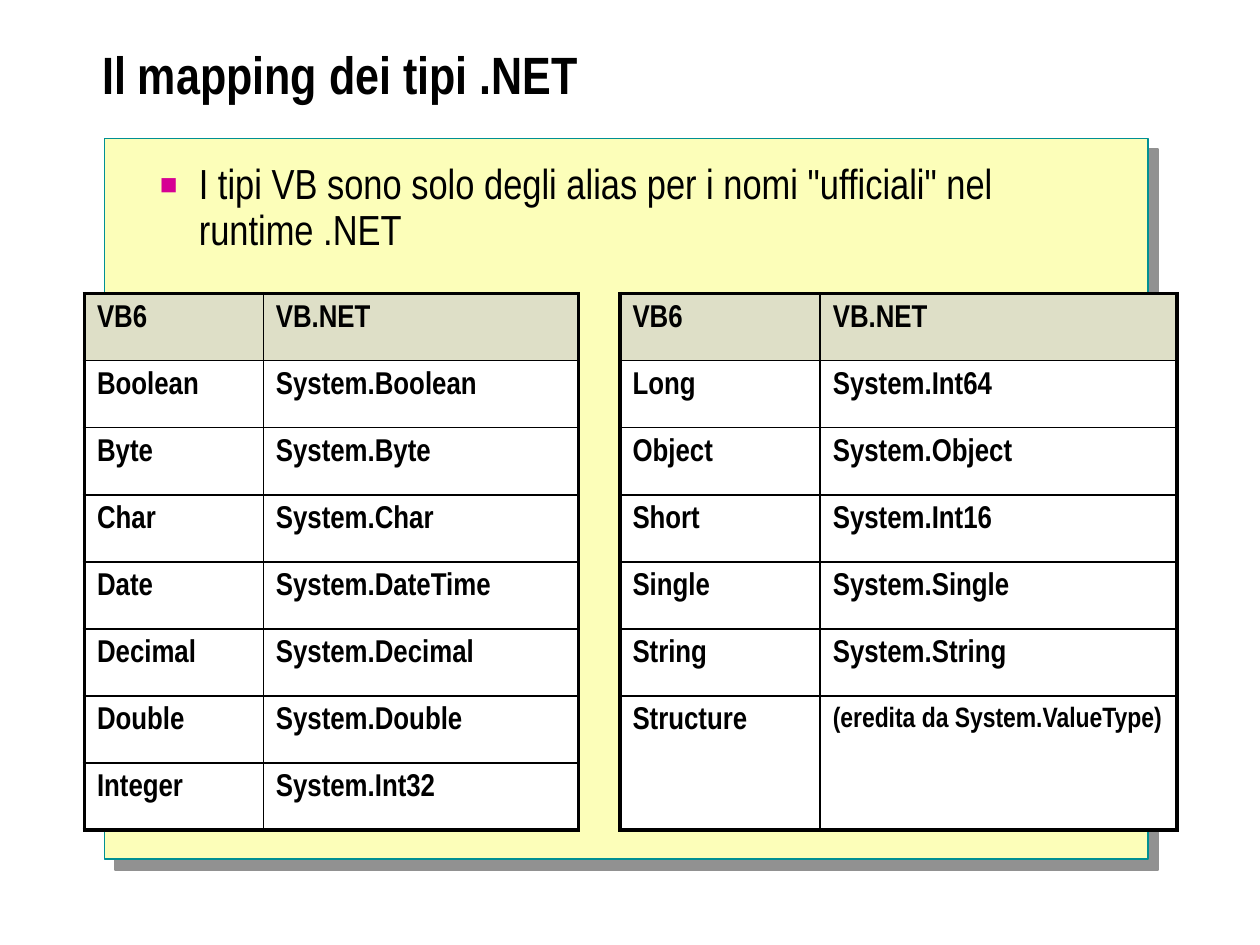
from lxml import etree
from pptx import Presentation
from pptx.dml.color import RGBColor
from pptx.enum.shapes import MSO_SHAPE
from pptx.enum.text import MSO_ANCHOR, MSO_AUTO_SIZE, PP_ALIGN
from pptx.oxml.ns import qn
from pptx.util import Inches, Pt

RECTANGLE = MSO_SHAPE.RECTANGLE
TOP, MIDDLE = MSO_ANCHOR.TOP, MSO_ANCHOR.MIDDLE
LEFT = PP_ALIGN.LEFT
NO_AUTOFIT = MSO_AUTO_SIZE.NONE

ROW_HEIGHT = 0.5325
HEADER = ("VB6", "VB.NET")
LEFT_TYPES = [
    HEADER,
    ("Boolean", "System.Boolean"),
    ("Byte", "System.Byte"),
    ("Char", "System.Char"),
    ("Date", "System.DateTime"),
    ("Decimal", "System.Decimal"),
    ("Double", "System.Double"),
    ("Integer", "System.Int32"),
]
RIGHT_TYPES = [
    HEADER,
    ("Long", "System.Int64"),
    ("Object", "System.Object"),
    ("Short", "System.Int16"),
    ("Single", "System.Single"),
    ("String", "System.String"),
    ("Structure", "(eredita da System.ValueType)"),
]


def color(hex_string):
    return RGBColor.from_string(hex_string)


def add_element(parent, tag, **attributes):
    element = etree.SubElement(parent, qn(tag))
    for name, value in attributes.items():
        element.set(name, str(value))
    return element


class SlideBuilder:
    font_name = "Arial Narrow"
    text_color = "000000"
    border_color = "000000"
    header_fill = "DEDFC7"
    cell_fill = "FFFFFF"
    outer_border, inner_border = 2.25, 1

    def __init__(self, slide):
        self.slide = slide

    def format_paragraph(self, paragraph, size, bold=False, line_spacing=0.9):
        paragraph.alignment = LEFT
        paragraph.line_spacing = line_spacing
        paragraph.font.name = self.font_name
        paragraph.font.size = Pt(size)
        paragraph.font.bold = bold
        paragraph.font.color.rgb = color(self.text_color)

    def space_before(self, paragraph, percent):
        properties = paragraph._p.get_or_add_pPr()
        spacing = add_element(properties, "a:spcBef")
        add_element(spacing, "a:spcPct", val=percent * 1000)

    def title(self, text, left, top, width, height):
        title = self.slide.shapes.title
        title.left, title.top = Inches(left), Inches(top)
        title.width, title.height = Inches(width), Inches(height)
        frame = title.text_frame
        frame.text = text
        frame.auto_size = NO_AUTOFIT
        frame.vertical_anchor = MIDDLE
        self.format_paragraph(frame.paragraphs[0], 30, True, 0.8)

    def panel(self, left, top, width, height):
        shape = self.slide.shapes.add_shape(
            RECTANGLE, Inches(left), Inches(top), Inches(width), Inches(height))
        shape.fill.solid()
        shape.fill.fore_color.rgb = color("FCFEB9")
        shape.line.color.rgb = color("009094")
        shape.line.width = Pt(1)
        # Hard offset shadow towards the lower right
        shape.shadow.inherit = False
        effects = shape._element.spPr.find(qn("a:effectLst"))
        shadow = add_element(effects, "a:outerShdw", dist=Pt(8.5),
                             dir=45 * 60000, algn="ctr", rotWithShape=0)
        add_element(shadow, "a:srgbClr", val="919191")

    def bullet(self, text, left, top, width, height):
        box = self.slide.shapes.add_textbox(
            Inches(left), Inches(top), Inches(width), Inches(height))
        box.text_frame.word_wrap = True
        paragraph = box.text_frame.paragraphs[0]
        paragraph.text = text
        properties = paragraph._p.get_or_add_pPr()
        properties.set("marL", str(Inches(0.31)))
        properties.set("indent", str(-Inches(0.31)))
        self.space_before(paragraph, 60)
        bullet_color = add_element(properties, "a:buClr")
        add_element(bullet_color, "a:srgbClr", val="D60093")
        add_element(properties, "a:buSzPct", val=70000)
        add_element(properties, "a:buFont", typeface="Arial")
        add_element(properties, "a:buChar", char="■")
        self.format_paragraph(paragraph, 24)

    def cell_borders(self, cell, outer_sides):
        properties = cell._tc.get_or_add_tcPr()
        for side in "LRTB":
            width = self.outer_border if side in outer_sides else self.inner_border
            line = add_element(properties, f"a:ln{side}", w=Pt(width))
            fill = add_element(line, "a:solidFill")
            add_element(fill, "a:srgbClr", val=self.border_color)

    def cell(self, cell, text, fill, size, outer_sides):
        self.cell_borders(cell, outer_sides)
        cell.fill.solid()
        cell.fill.fore_color.rgb = color(fill)
        cell.vertical_anchor = TOP
        cell.margin_left = cell.margin_right = Inches(0.1)
        cell.margin_top = cell.margin_bottom = Inches(0.1)
        cell.text = text
        paragraph = cell.text_frame.paragraphs[0]
        self.space_before(paragraph, 60)
        self.format_paragraph(paragraph, size, bold=True)

    def table(self, rows, left, top, column_widths, row_heights, small_cells=()):
        table = self.slide.shapes.add_table(
            len(rows), len(column_widths), Inches(left), Inches(top),
            Inches(sum(column_widths)), Inches(sum(row_heights))).table
        table.first_row = table.horz_banding = False
        for column, width in zip(table.columns, column_widths):
            column.width = Inches(width)
        for row, height in zip(table.rows, row_heights):
            row.height = Inches(height)
        for r, texts in enumerate(rows):
            for c, text in enumerate(texts):
                outer_sides = "L" if c == 0 else "R"
                if r == 0:
                    outer_sides += "T"
                if r == len(rows) - 1:
                    outer_sides += "B"
                fill = self.header_fill if r == 0 else self.cell_fill
                size = 16 if (r, c) in small_cells else 18
                self.cell(table.cell(r, c), text, fill, size, outer_sides)


def main():
    presentation = Presentation()
    presentation.slide_width, presentation.slide_height = Inches(10), Inches(7.5)
    title_only = presentation.slide_layouts[5]
    builder = SlideBuilder(presentation.slides.add_slide(title_only))

    # Title, background panel and introduction
    builder.title("Il mapping dei tipi .NET", 0.71, 0.17, 8.96, 0.92)
    builder.panel(0.83, 1.1, 8.28, 5.72)
    builder.bullet('I tipi VB sono solo degli alias per i nomi "ufficiali" '
                   "nel runtime .NET", 1.17, 1.25, 7.67, 0.83)

    # Type tables; the last row on the right is double height
    builder.table(LEFT_TYPES, 0.67, 2.33, (1.42, 2.5), [ROW_HEIGHT] * 8)
    builder.table(RIGHT_TYPES, 4.92, 2.33, (1.59, 2.83),
                  [ROW_HEIGHT] * 6 + [2 * ROW_HEIGHT], small_cells={(6, 1)})

    presentation.save("out.pptx")


if __name__ == "__main__":
    main()
